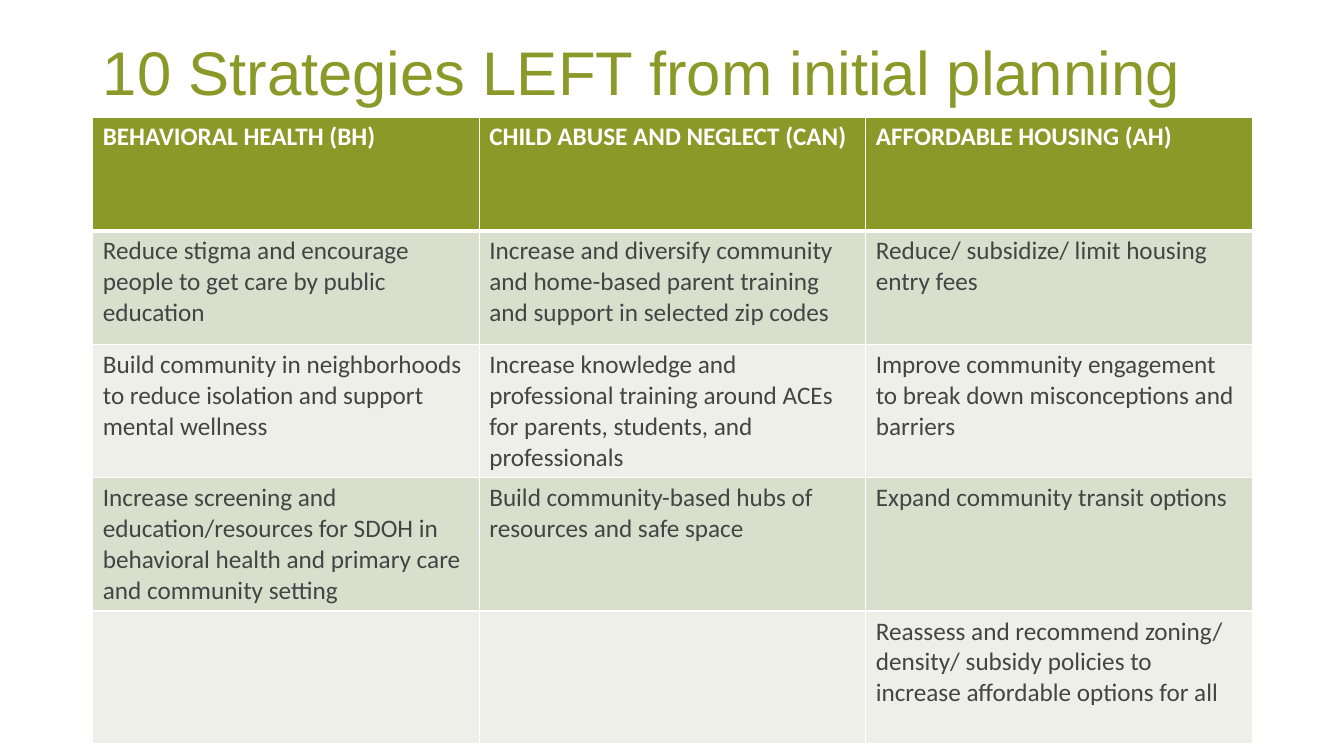
from lxml import etree
from pptx import Presentation
from pptx.dml.color import RGBColor
from pptx.enum.text import MSO_ANCHOR, PP_ALIGN
from pptx.oxml.ns import qn
from pptx.util import Inches, Pt

MIDDLE = MSO_ANCHOR.MIDDLE
LEFT = PP_ALIGN.LEFT
TITLE_ONLY = 5

COLORS = {
    "green": "8B9928",
    "white": "FFFFFF",
    "text": "444444",
    "band_dark": "DADECD",
    "band_light": "EEEFE8",
}

STRATEGIES = [
    ["BEHAVIORAL HEALTH (BH)", "CHILD ABUSE AND NEGLECT (CAN)", "AFFORDABLE HOUSING (AH)"],
    ["Reduce stigma and encourage people to get care by public education",
     "Increase and diversify community and home-based parent training and support "
     "in selected zip codes",
     "Reduce/ subsidize/ limit housing entry fees"],
    ["Build community in neighborhoods to reduce isolation and support mental wellness",
     "Increase knowledge and professional training around ACEs for parents, students, "
     "and professionals",
     "Improve community engagement to break down misconceptions and barriers"],
    ["Increase screening and education/resources for SDOH in behavioral health and "
     "primary care and community setting",
     "Build community-based hubs of resources and safe space",
     "Expand community transit options"],
    ["", "",
     "Reassess and recommend zoning/ density/ subsidy policies to increase "
     "affordable options for all"],
]
ROW_HEIGHTS = [1.13, 1.13, 1.32, 1.32, 1.32]


def rgb(name):
    return RGBColor.from_string(COLORS[name])


def add_run(p, text, font, size, color, bold=False):
    r = p.add_run()
    r.text = text
    r.font.name = font
    r.font.size = Pt(size)
    r.font.bold = bold
    r.font.color.rgb = rgb(color)


def set_borders(cell, bottom_width):
    """White cell borders, one point wide except for the bottom."""
    tcPr = cell._tc.get_or_add_tcPr()
    widths = {"lnL": 1, "lnR": 1, "lnT": 1, "lnB": bottom_width}
    for i, (side, width) in enumerate(widths.items()):
        ln = etree.Element(qn(f"a:{side}"), w=str(Pt(width)))
        fill = etree.SubElement(ln, qn("a:solidFill"))
        etree.SubElement(fill, qn("a:srgbClr"), val=COLORS["white"])
        tcPr.insert(i, ln)


def add_title(s, text, left, top, width, height):
    title = s.shapes.title
    title.left, title.top = Inches(left), Inches(top)
    title.width, title.height = Inches(width), Inches(height)
    tf = title.text_frame
    tf.word_wrap = True
    tf.vertical_anchor = MIDDLE
    p = tf.paragraphs[0]
    p.alignment = LEFT
    p.line_spacing = 0.9
    add_run(p, text, "Arial", 44, "green")


def add_strategy_table(s, rows, left, top, width):
    table = s.shapes.add_table(
        len(rows), len(rows[0]), Inches(left), Inches(top),
        Inches(width), Inches(sum(ROW_HEIGHTS))).table
    for row, height in zip(table.rows, ROW_HEIGHTS):
        row.height = Inches(height)
    for i, texts in enumerate(rows):
        header = i == 0
        band = "green" if header else "band_dark" if i % 2 else "band_light"
        for j, text in enumerate(texts):
            cell = table.cell(i, j)
            cell.fill.solid()
            cell.fill.fore_color.rgb = rgb(band)
            set_borders(cell, 3 if header else 1)
            if text:
                add_run(cell.text_frame.paragraphs[0], text, "Calibri", 18,
                        "white" if header else "text", header)


def main():
    prs = Presentation()
    prs.slide_width, prs.slide_height = Inches(13.33), Inches(7.5)
    s = prs.slides.add_slide(prs.slide_layouts[TITLE_ONLY])
    s.background.fill.solid()
    s.background.fill.fore_color.rgb = rgb("white")
    add_title(s, "10 Strategies LEFT from initial planning", 0.92, 0.02, 11.5, 1.45)
    add_strategy_table(s, STRATEGIES, 0.92, 1.16, 11.5)
    prs.save("out.pptx")


if __name__ == "__main__":
    main()
